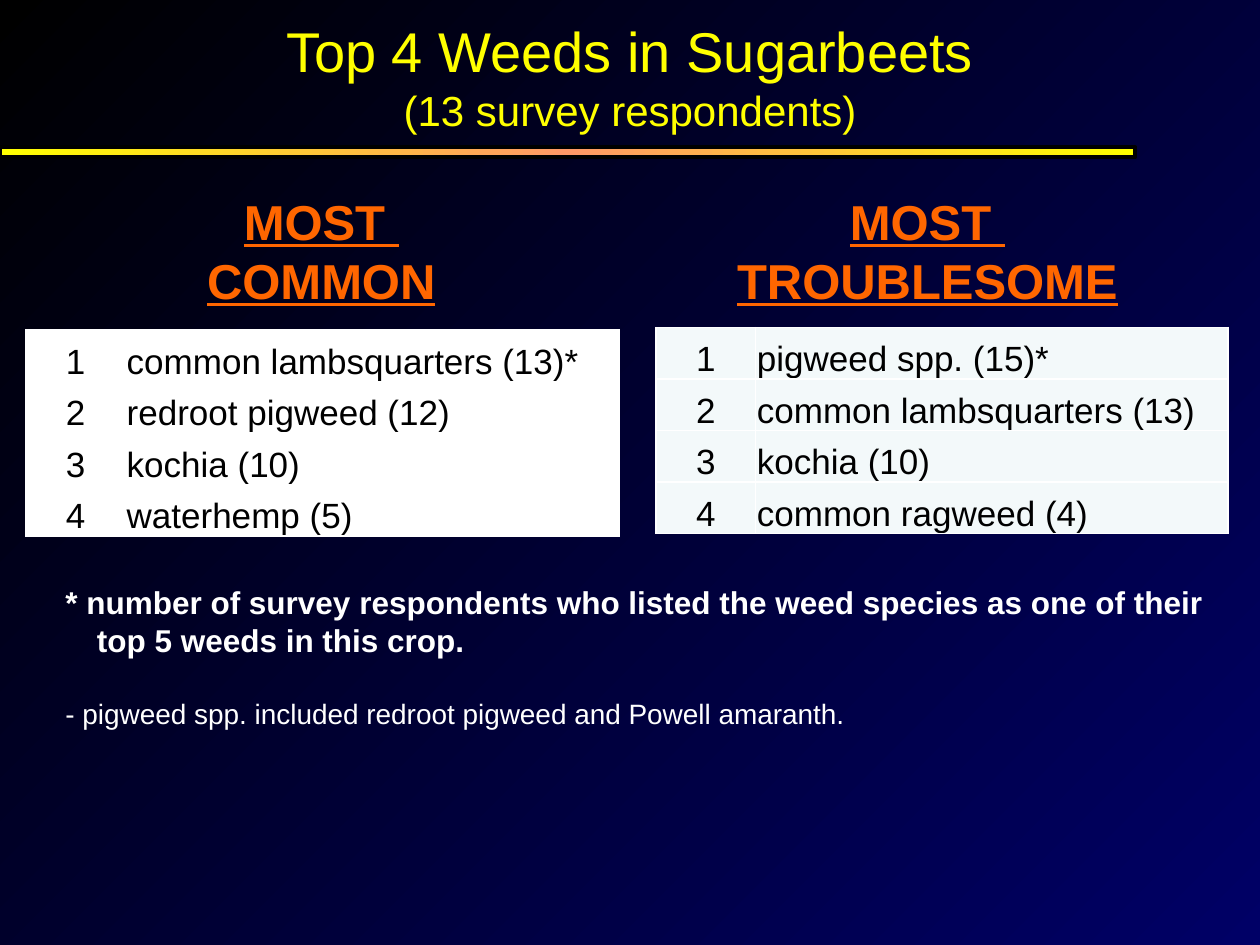
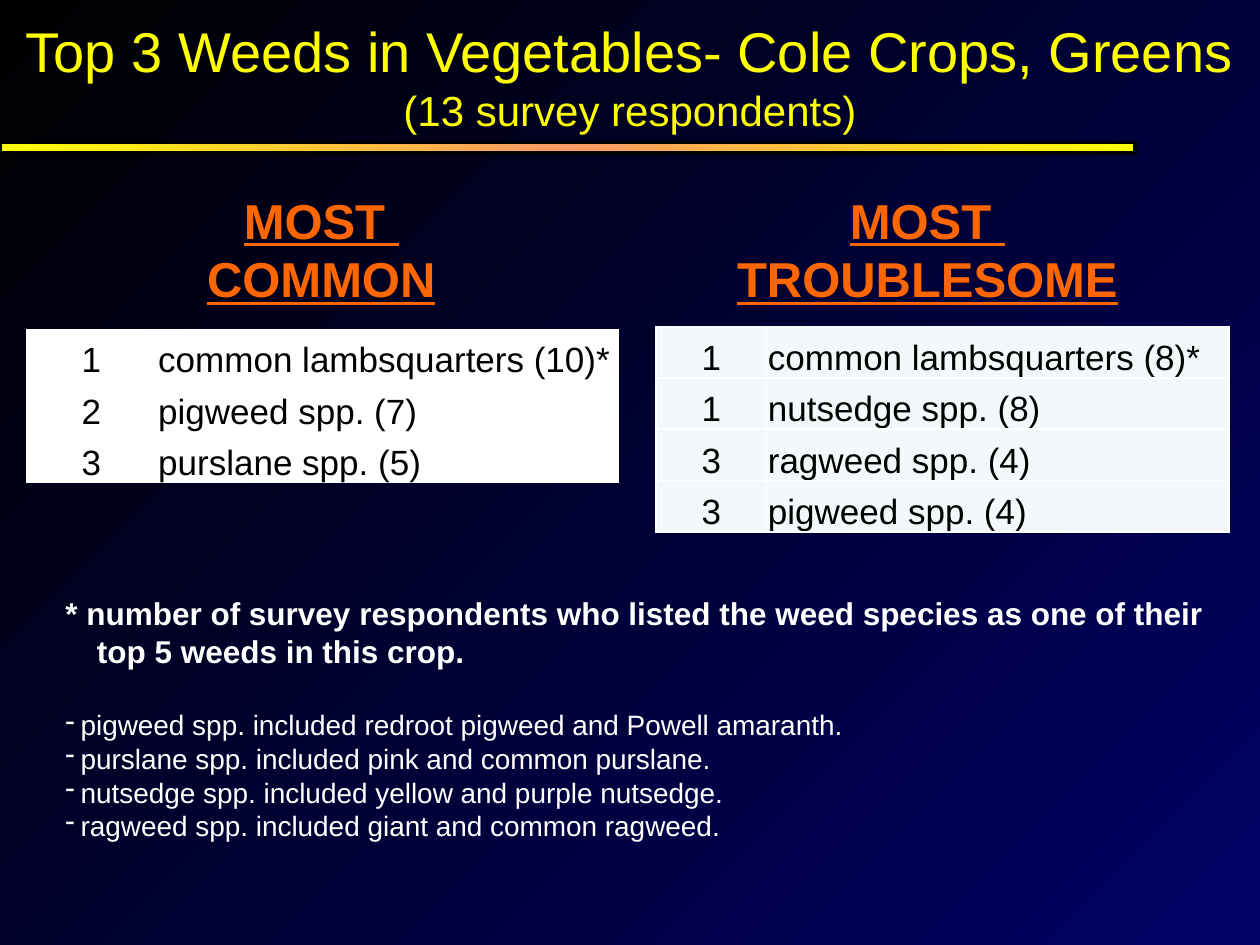
from copy import deepcopy

from lxml import etree
from pptx import Presentation
from pptx.dml.color import RGBColor
from pptx.enum.shapes import MSO_SHAPE
from pptx.enum.text import MSO_ANCHOR, MSO_AUTO_SIZE, PP_ALIGN
from pptx.oxml.ns import qn
from pptx.util import Pt

RECTANGLE = MSO_SHAPE.RECTANGLE
MIDDLE, BOTTOM = MSO_ANCHOR.MIDDLE, MSO_ANCHOR.BOTTOM
GROW = MSO_AUTO_SIZE.SHAPE_TO_FIT_TEXT
CENTER, LEFT = PP_ALIGN.CENTER, PP_ALIGN.LEFT

FONT = "Arial"
BLACK, NAVY, WHITE = "000000", "000066", "FFFFFF"
YELLOW, PEACH, ORANGE, MIST = "FFFF00", "FF9966", "FF6600", "F3F9FA"
BORDER_SIDES = ("a:lnL", "a:lnR", "a:lnT", "a:lnB")
SURVEY = "(13 survey respondents)"
FOOTNOTE = ("* number of survey respondents who listed the weed species "
            "as one of their top 5 weeds in this crop.")


def rgb(color):
    return RGBColor.from_string(color)


class Deck:
    def __init__(self):
        self.prs = Presentation()
        self.prs.slide_width, self.prs.slide_height = Pt(720), Pt(540)
        self.slide = None

    def new_slide(self):
        self.slide = self.prs.slides.add_slide(self.prs.slide_layouts[6])
        fill = self.slide.background.fill
        fill.gradient()
        fill.gradient_angle = 315
        for stop, color in zip(fill.gradient_stops, (BLACK, NAVY)):
            stop.color.rgb = rgb(color)

    def style(self, paragraph, text, size, color, align=LEFT, bold=False):
        paragraph.text = text
        paragraph.alignment = align
        font = paragraph.font
        font.name, font.size, font.bold = FONT, Pt(size), bold
        font.color.rgb = rgb(color)

    def text_frame(self, left, top, width, height, wrap=True):
        frame = self.slide.shapes.add_textbox(
            Pt(left), Pt(top), Pt(width), Pt(height)).text_frame
        frame.word_wrap = wrap
        return frame

    def title(self, heading, left, width):
        frame = self.text_frame(left, 0, width, 86.4)
        frame.vertical_anchor = MIDDLE
        self.style(frame.paragraphs[0], heading, 32, YELLOW, CENTER)
        self.style(frame.add_paragraph(), SURVEY, 24, YELLOW, CENTER)

    def rule(self, top):
        bar = self.slide.shapes.add_shape(RECTANGLE, 0, Pt(top), Pt(648.7), Pt(5.8))
        bar.shadow.inherit = False
        bar.line.color.rgb = rgb(BLACK)
        bar.line.width = Pt(2.25)
        bar.fill.gradient()
        bar.fill.gradient_angle = 0
        stops = bar._element.spPr.find(qn("a:gradFill")).find(qn("a:gsLst"))
        stops.insert(1, deepcopy(stops[0]))
        for stop, color, position in zip(
                bar.fill.gradient_stops, (YELLOW, PEACH, YELLOW), (0, 0.5, 1)):
            stop.color.rgb = rgb(color)
            stop.position = position

    def column_heading(self, word, left, top, width, wrap):
        frame = self.text_frame(left, top, width, 74.9, wrap)
        frame.auto_size = GROW
        for paragraph, text in ((frame.paragraphs[0], "MOST "),
                                (frame.add_paragraph(), word)):
            self.style(paragraph, text, 28, ORANGE, CENTER, True)
            paragraph.font.underline = True

    def ranking(self, weeds, left, top, widths, background, ruled=True):
        table = self.slide.shapes.add_table(
            len(weeds), 2, Pt(left), Pt(top),
            Pt(sum(widths)), Pt(29.4 * len(weeds))).table
        table.first_row = table.horz_banding = False
        for column, width in zip(table.columns, widths):
            column.width = Pt(width)
        for row, entry in zip(table.rows, weeds):
            row.height = Pt(29.4)
            for cell, text, align in zip(row.cells, entry, (CENTER, LEFT)):
                cell.margin_left = cell.margin_right = cell.margin_top = Pt(0.7)
                cell.margin_bottom = 0
                cell.vertical_anchor = BOTTOM
                self.style(cell.text_frame.paragraphs[0], text, 20, BLACK, align)
                self.borders(cell, ruled)
                cell.fill.solid()
                cell.fill.fore_color.rgb = rgb(background)

    def borders(self, cell, ruled):
        properties = cell._tc.get_or_add_tcPr()
        for side in BORDER_SIDES:
            line = etree.SubElement(properties, qn(side), w=str(Pt(1)))
            if ruled:
                solid = etree.SubElement(line, qn("a:solidFill"))
                etree.SubElement(solid, qn("a:srgbClr"), val=WHITE)
            else:
                etree.SubElement(line, qn("a:noFill"))

    def notes(self, remarks, top, height, bulleted):
        frame = self.text_frame(30.3, top, 666, height)
        frame.auto_size = GROW
        footnote = frame.paragraphs[0]
        self.style(footnote, FOOTNOTE, 18, WHITE, bold=True)
        self.hang(footnote, 18)
        for index, text in enumerate(remarks):
            remark = frame.add_paragraph()
            self.style(remark, text, 16, WHITE)
            self.hang(remark, 8.64)
            if index == 0:
                remark.space_before = Pt(21.6)
            if bulleted:
                etree.SubElement(remark._p.get_or_add_pPr(), qn("a:buChar"), char="-")
                properties = remark._p.pPr
                properties.append(properties.find(qn("a:defRPr")))

    def hang(self, paragraph, indent):
        properties = paragraph._p.get_or_add_pPr()
        properties.set("marL", str(Pt(indent)))
        properties.set("indent", str(-Pt(indent)))

    def headings(self, top):
        self.column_heading("COMMON", 97.2, top, 172.8, True)
        self.column_heading("TROUBLESOME", 412.6, top, 234.7, False)


def main():
    deck = Deck()

    deck.new_slide()
    deck.rule(84.2)
    deck.headings(105.8)
    deck.ranking([("1", "common lambsquarters (13)*"), ("2", "redroot pigweed (12)"),
                  ("3", "kochia (10)"), ("4", "waterhemp (5)")],
                 14.8, 188.6, (56.9, 282.2), WHITE)
    deck.ranking([("1", "pigweed spp. (15)*"), ("2", "common lambsquarters (13)"),
                  ("3", "kochia (10)"), ("4", "common ragweed (4)")],
                 374.9, 187.2, (56.9, 270), MIST)
    deck.title("Top 4 Weeds in Sugarbeets", 24, 672)
    deck.notes(["- pigweed spp. included redroot pigweed and Powell amaranth."],
               329.8, 92.2, False)

    deck.new_slide()
    deck.rule(81.4)
    deck.headings(105.1)
    deck.ranking([("1", "common lambsquarters (10)*"), ("2", "pigweed spp. (7)"),
                  ("3", "purslane spp. (5)")],
                 14.8, 187.9, (74.9, 264.2), WHITE, ruled=False)
    deck.ranking([("1", "common lambsquarters (8)*"), ("1", "nutsedge spp. (8)"),
                  ("3", "ragweed spp. (4)"), ("3", "pigweed spp. (4)")],
                 374.9, 186.5, (63.2, 264.2), MIST)
    deck.title("Top 3 Weeds in Vegetables- Cole Crops, Greens", 0, 720)
    deck.notes(["pigweed spp. included redroot pigweed and Powell amaranth.",
                "purslane spp. included pink and common purslane.",
                "nutsedge spp. included yellow and purple nutsedge.",
                "ragweed spp. included giant and common ragweed."],
               336.2, 169.9, True)

    deck.prs.save("out.pptx")


if __name__ == "__main__":
    main()
